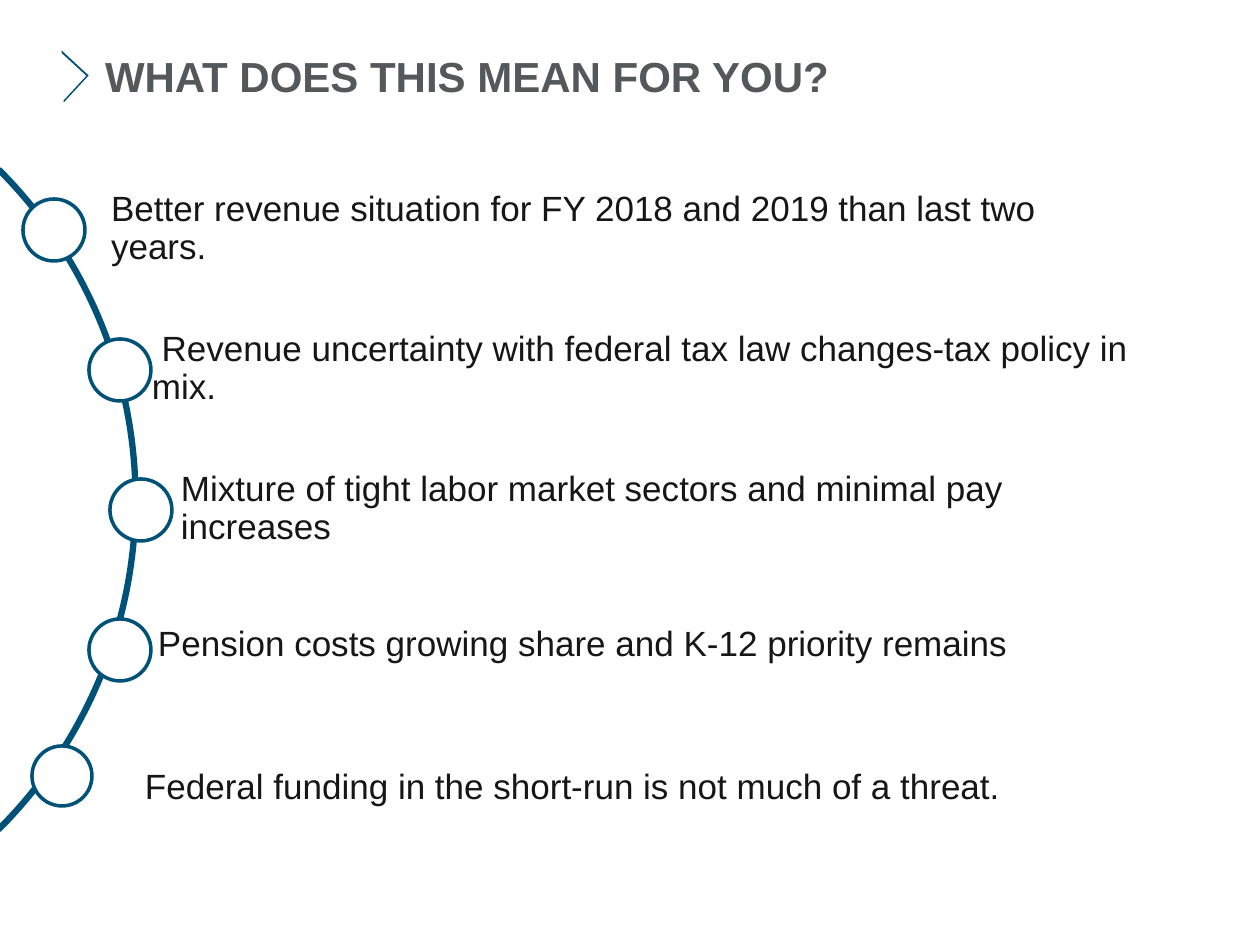
from dataclasses import dataclass

from pptx import Presentation
from pptx import util as u
from pptx.dml import color
from pptx.enum import shapes, text

SCALE = 914400 / 126


@dataclass(frozen=True)
class Theme:
    accent: str = "005177"
    heading: str = "54585A"
    body: str = "161616"
    paper: str = "FFFFFF"
    font: str = "Arial"
    heading_size: int = 24
    body_size: int = 20
    line_width: int = 2


@dataclass(frozen=True)
class Point:
    wording: str
    left: int
    top: int
    width: int
    dot_left: int
    dot_top: int
    dot_size: int = 62


THEME = Theme()
TEXT_HEIGHT = 93
POINTS = [
    Point("Better revenue situation for FY 2018 and 2019 than last two years.",
          37, 183, 1062, 23, 199),
    Point(" Revenue uncertainty with federal tax law changes-tax policy in mix.",
          78, 323, 1120, 89, 339),
    Point("Mixture of tight labor market sectors and minimal pay increases",
          107, 463, 1018, 110, 479),
    Point("Pension costs growing share and K-12 priority remains",
          84, 599, 1123, 89, 619),
    Point("Federal funding in the short-run is not much of a threat.",
          71, 742, 1106, 32, 746, 60),
]


def px(length: int) -> int:
    return round(length * SCALE)


def apply(target, values: dict) -> None:
    for name, value in values.items():
        setattr(target, name, value)


def write(box, wording: str, frame_format: dict, para_format: dict,
          size: int, tint: str, bold: bool = False) -> None:
    apply(box.text_frame, {"word_wrap": True, "auto_size": text.MSO_AUTO_SIZE.NONE,
                           **frame_format})
    para = box.text_frame.paragraphs[0]
    apply(para, {"alignment": text.PP_ALIGN.LEFT, **para_format})
    span = para.add_run()
    span.text = wording
    apply(span.font, {"name": THEME.font, "size": u.Pt(size), "bold": bold})
    span.font.color.rgb = color.RGBColor.from_string(tint)


def draw_shape(page, kind, left: int, top: int, size: int,
               fill: str | None = None, line: str | None = None,
               adjustments: tuple = (), rotation: float = 0):
    shape = page.shapes.add_shape(kind, px(left), px(top), px(size), px(size))
    shape.shadow.inherit = False
    shape.rotation = rotation
    for index, value in enumerate(adjustments):
        shape.adjustments[index] = value
    if fill:
        shape.fill.solid()
        shape.fill.fore_color.rgb = color.RGBColor.from_string(fill)
    else:
        shape.fill.background()
    if line:
        shape.line.color.rgb = color.RGBColor.from_string(line)
        shape.line.width = u.Pt(THEME.line_width)
    else:
        shape.line.fill.background()
    return shape


def draw_title(page, wording: str) -> None:
    title = page.shapes.title
    apply(title, {"left": px(105), "top": px(32), "width": px(1039), "height": px(69)})
    margins = {f"margin_{side}": 0 for side in ("left", "top", "right", "bottom")}
    write(title, wording, {"vertical_anchor": text.MSO_ANCHOR.BOTTOM, **margins}, {},
          THEME.heading_size, THEME.heading, bold=True)


def draw_point(page, point: Point) -> None:
    box = page.shapes.add_textbox(px(point.left), px(point.top),
                                  px(point.width), px(TEXT_HEIGHT))
    margins = {f"margin_{side}": px(8) for side in ("top", "right", "bottom")}
    write(box, point.wording,
          {"vertical_anchor": text.MSO_ANCHOR.MIDDLE, "margin_left": px(74), **margins},
          {"line_spacing": 0.9}, THEME.body_size, THEME.body)
    draw_shape(page, shapes.MSO_SHAPE.OVAL, point.dot_left, point.dot_top,
               point.dot_size, fill=THEME.paper, line=THEME.accent)


def main() -> None:
    deck = Presentation()
    apply(deck, {"slide_width": px(1260), "slide_height": px(945)})
    page = deck.slides.add_slide(deck.slide_layouts[5])
    draw_shape(page, shapes.MSO_SHAPE.HALF_FRAME, 44, 58, 37, fill=THEME.accent,
               adjustments=(0.04, 0.05), rotation=132.7)
    draw_title(page, "WHAT DOES THIS MEAN FOR YOU?")
    draw_shape(page, shapes.MSO_SHAPE.BLOCK_ARC, -798, 32, 935, line=THEME.accent,
               adjustments=(189, 27, 0.003))
    for point in POINTS:
        draw_point(page, point)
    deck.save("out.pptx")


if __name__ == "__main__":
    main()
